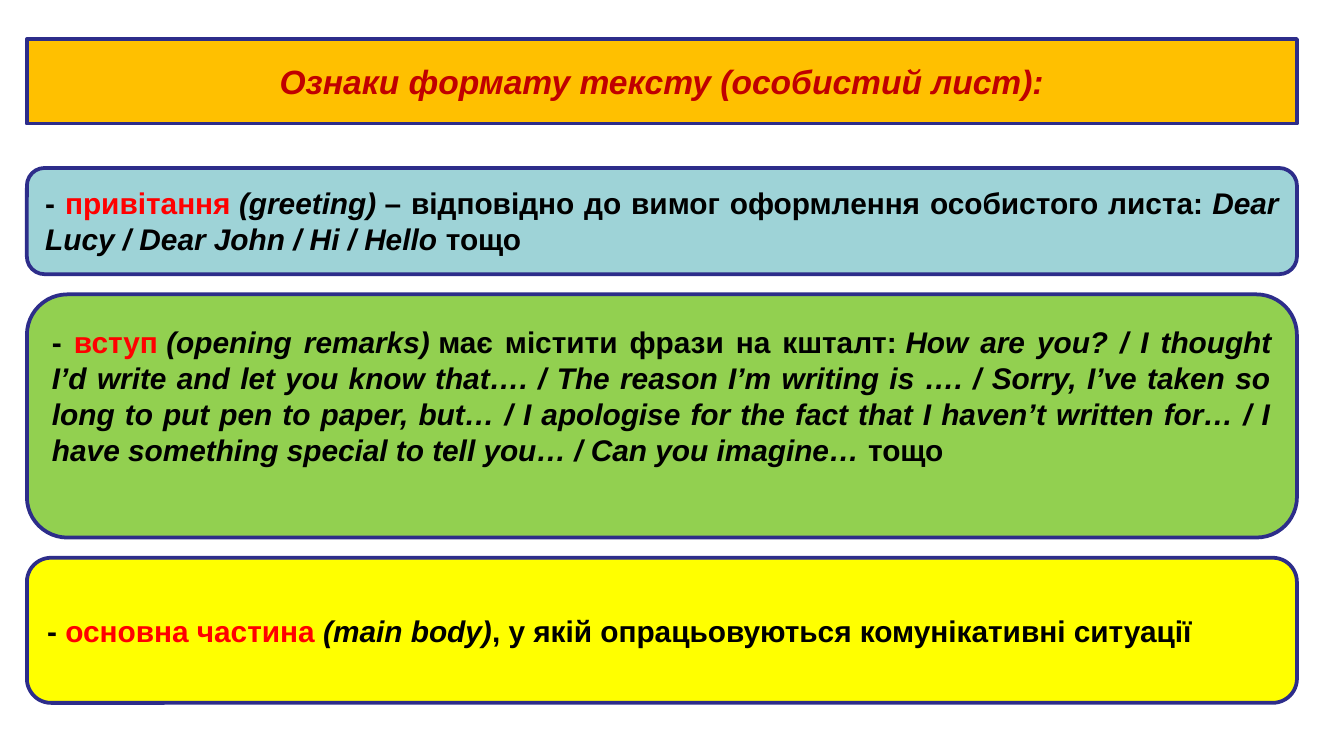
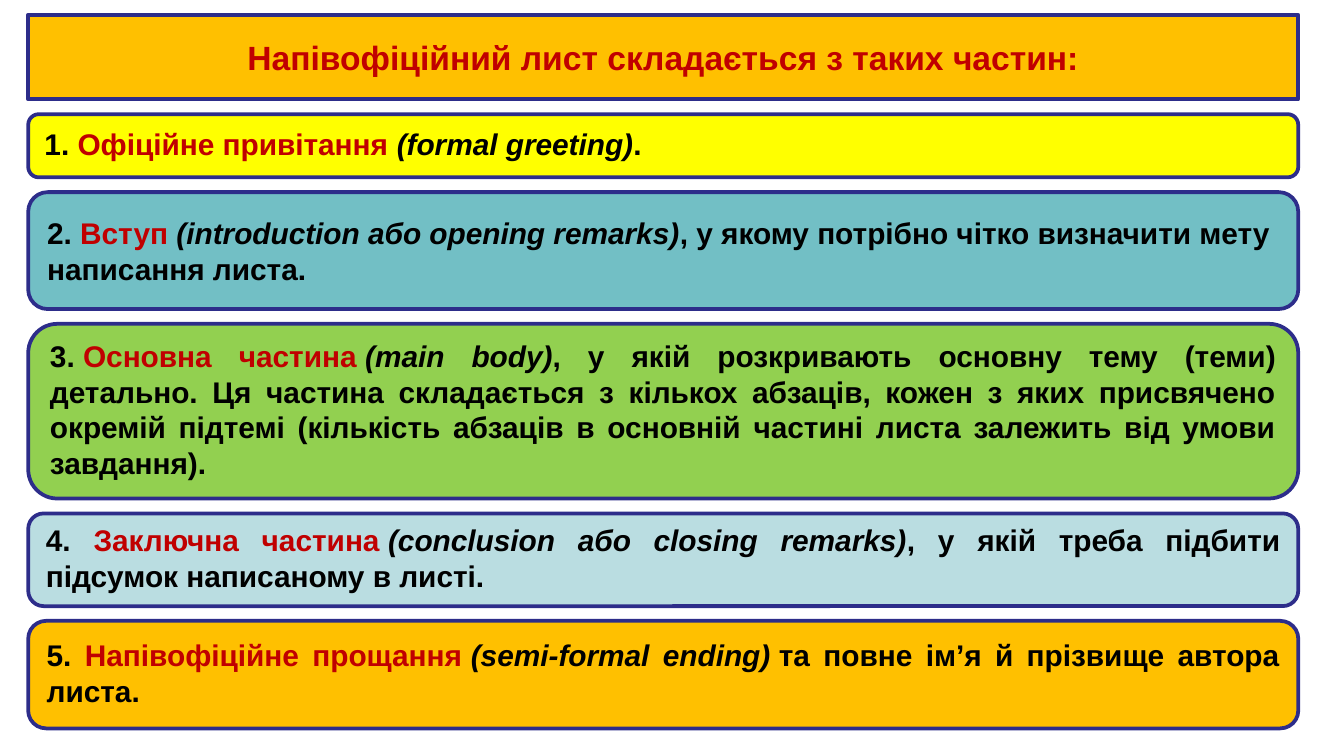
from pptx import Presentation
from pptx import util as u
from pptx.dml.color import RGBColor
from pptx.enum import shapes, text

# Shared style
FONT = "Arial"
NAVY, BLACK, RED, CRIMSON = "2D2D8A", "000000", "FF0000", "C00000"
GOLD, YELLOW, GREEN = "FFC000", "FFFF00", "92D050"
SKY, TEAL, PALE = "9ED3D7", "72BFC5", "BADDE1"
LEFT, JUST = text.PP_ALIGN.LEFT, text.PP_ALIGN.JUSTIFY
WIDTH, HEAD = 9.45, 0.63


def rgb(code):
    return RGBColor.from_string(code)


class Deck:
    """Holds the style and the current slide."""

    def __init__(self):
        self.prs = Presentation()
        self.prs.slide_width = u.Inches(10)
        self.prs.slide_height = u.Inches(10 * 9 / 16)

    def start(self, left, accent):
        self.slide = self.prs.slides.add_slide(self.prs.slide_layouts[5])
        self.left, self.accent = left, accent

    def paint(self, shape, fill):
        shape.fill.solid()
        shape.fill.fore_color.rgb = rgb(fill)
        shape.line.color.rgb = rgb(NAVY)
        shape.line.width = u.Pt(2)
        frame = shape.text_frame
        frame.word_wrap = True
        frame.auto_size = text.MSO_AUTO_SIZE.NONE
        frame.vertical_anchor = text.MSO_ANCHOR.MIDDLE
        return frame

    def run(self, para, words, color=BLACK, size=16, italic=False):
        run = para.add_run()
        run.text = words.replace("~", chr(160))  # ~ marks a fixed space
        font = run.font
        font.name, font.size = FONT, u.Pt(size)
        font.bold, font.italic = True, italic
        font.color.rgb = rgb(color)

    def title(self, top, words, italic=False):
        box = self.slide.shapes.title
        box.left, box.top = u.Inches(self.left), u.Inches(top)
        box.width, box.height = u.Inches(WIDTH), u.Inches(HEAD)
        para = self.paint(box, GOLD).paragraphs[0]
        para.alignment = text.PP_ALIGN.CENTER
        self.run(para, words, CRIMSON, 18, italic)

    def band(self, top, height, fill, align, foot, parts):
        box = self.slide.shapes.add_shape(
            shapes.MSO_SHAPE.ROUNDED_RECTANGLE, u.Inches(self.left),
            u.Inches(top), u.Inches(WIDTH), u.Inches(height))
        box.shadow.inherit = False
        frame = self.paint(box, fill)
        frame.margin_bottom = u.Inches(foot)
        para = frame.paragraphs[0]
        para.alignment = align
        # Mark, key term, then italic and upright in turn
        mark, key, *rest = parts
        self.run(para, mark)
        self.run(para, key, self.accent)
        for i, words in enumerate(rest):
            self.run(para, words, italic=i % 2 == 0)

    def stack(self, top, gap, bands):
        for height, *band in bands:
            self.band(top, height, *band)
            top += height + gap


# Parts of a personal letter: height, fill, alignment, bottom inset, runs
PERSONAL = [
    (0.79, SKY, JUST, 0.06, [
        "- ", "привітання~", "(greeting)~",
        "– відповідно до вимог оформлення особистого листа:~",
        "Dear Lucy / Dear John / Hi / Hello~", "тощо"]),
    (1.81, GREEN, JUST, 0.35, [
        "- ", "вступ~", "(opening remarks)~",
        "має містити фрази на кшталт:~",
        "How are you? / I thought I’d write and let you know that…. / "
        "The reason I’m writing is …. / Sorry, I’ve taken so long to put "
        "pen to paper, but… / I apologise for the fact that I haven’t "
        "written for… / I have something special to tell you… / "
        "Can you imagine…", "~тощо"]),
    (1.08, YELLOW, LEFT, 0.05, [
        "- ", "основна частина~", "(main body)",
        ", у якій опрацьовуються комунікативні ситуації"]),
]

# Parts of a semi-formal letter
FORMAL = [
    (0.47, YELLOW, JUST, 0.08, [
        "1.~", "Офіційне привітання~", "(formal greeting)", "."]),
    (0.87, TEAL, LEFT, 0.05, [
        "2.~", "Вступ~", "(introduction або opening remarks)",
        ", у якому потрібно чітко визначити мету написання листа."]),
    (1.3, GREEN, JUST, 0.08, [
        "3.~", "Основна частина~", "(main body)",
        ", у якій розкривають основну тему (теми) детально. Ця частина "
        "складається з кількох абзаців, кожен з яких присвячено окремій "
        "підтемі (кількість абзаців в основній частині листа залежить "
        "від умови завдання)."]),
    (0.69, PALE, JUST, 0.08, [
        "4. ", "Заключна частина~", "(conclusion або closing remarks)",
        ", у якій треба підбити підсумок написаному в листі."]),
    (0.8, GOLD, JUST, 0.08, [
        "5. ", "Напівофіційне прощання~", "(semi-formal ending)~",
        "та повне ім’я й прізвище автора листа."]),
]


def main():
    deck = Deck()

    # Slide 1: personal letter
    deck.start(0.2, RED)
    deck.title(0.29, "Ознаки формату тексту (особистий лист):", italic=True)
    deck.stack(1.25, 0.15, PERSONAL)

    # Slide 2: semi-formal letter
    deck.start(0.21, CRIMSON)
    deck.title(0.11, "Напівофіційний лист складається з таких частин:")
    deck.stack(0.85, 0.11, FORMAL)

    deck.prs.save("out.pptx")


if __name__ == "__main__":
    main()
